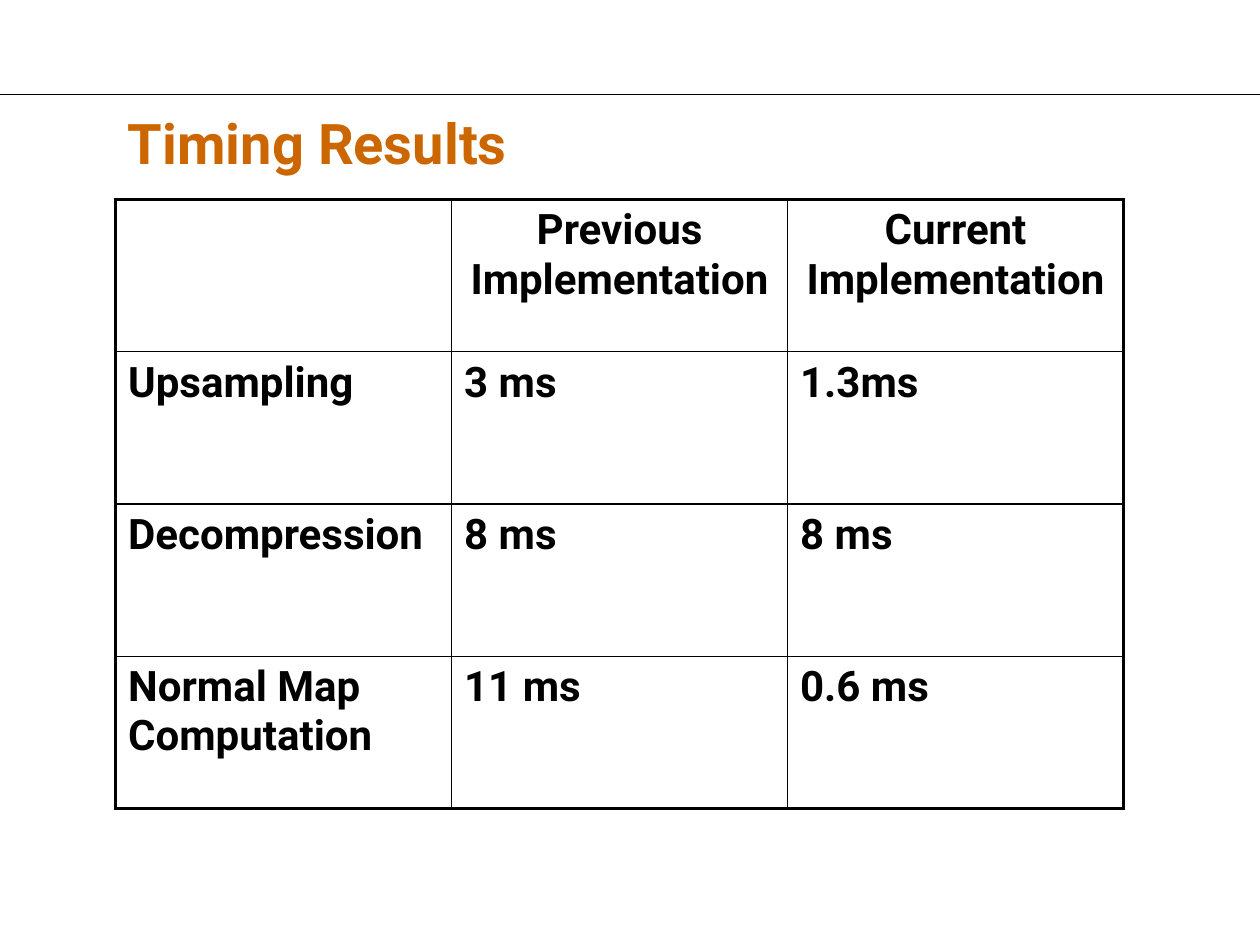
import pptx
import pptx.dml.color
import pptx.enum.shapes
import pptx.enum.text
import pptx.oxml
import pptx.oxml.ns
import pptx.util
from dataclasses import dataclass

Cm = pptx.util.Cm
Pt = pptx.util.Pt
RGB = pptx.dml.color.RGBColor.from_string
ALIGN = pptx.enum.text.PP_ALIGN

# Content
HEADING = "Timing Results"
TIMINGS = [
    ("", "Previous Implementation", "Current Implementation"),
    ("Upsampling", "3 ms", "1.3ms"),
    ("Decompression", "8 ms", "8 ms"),
    ("Normal Map Computation", "11 ms", "0.6 ms"),
]


@dataclass(frozen=True)
class Theme:
    font: str = "Roboto"
    ink: str = "000000"
    accent: str = "CC6600"
    heading_size: float = 32
    cell_size: float = 24
    rule: float = 0.75
    inner_border: float = 1
    outer_border: float = 2.25


THEME = Theme()

# Layout
SLIDE_W, SLIDE_H = Cm(25.4), Cm(19.05)
LEFT, CONTENT_W = Cm(2.33), Cm(20.32)
RULE_Y, HEADING_H = Cm(1.91), Cm(1.9)
TABLE_TOP, ROW_H = Cm(4.02), Cm(3.07)


def write(paragraph, text, size, color):
    run = paragraph.add_run()
    run.text = text
    run.font.name = THEME.font
    run.font.size = Pt(size)
    run.font.bold = True
    run.font.color.rgb = RGB(color)


def add_border(cell, side, points):
    cell._tc.get_or_add_tcPr().append(pptx.oxml.parse_xml(
        f'<a:ln{side} {pptx.oxml.ns.nsdecls("a")} w="{Pt(points)}">'
        f'<a:solidFill><a:srgbClr val="{THEME.ink}"/></a:solidFill>'
        f'<a:prstDash val="solid"/></a:ln{side}>'))


def add_rule(slide):
    rule = slide.shapes.add_connector(
        pptx.enum.shapes.MSO_CONNECTOR.STRAIGHT, 0, RULE_Y, SLIDE_W, RULE_Y)
    rule.line.color.rgb = RGB(THEME.ink)
    rule.line.width = Pt(THEME.rule)
    rule._element.spPr.append(pptx.oxml.parse_xml(
        f'<a:effectLst {pptx.oxml.ns.nsdecls("a")}/>'))


def add_heading(slide):
    heading = slide.shapes.add_textbox(LEFT, RULE_Y, CONTENT_W, HEADING_H).text_frame
    heading.word_wrap = True
    heading.vertical_anchor = pptx.enum.text.MSO_ANCHOR.MIDDLE
    write(heading.paragraphs[0], HEADING, THEME.heading_size, THEME.accent)


def add_timings(slide):
    row_count, col_count = len(TIMINGS), len(TIMINGS[0])
    timings = slide.shapes.add_table(
        row_count, col_count, LEFT, TABLE_TOP, CONTENT_W, ROW_H * row_count).table
    timings.first_row = timings.horz_banding = False
    for r, row in enumerate(TIMINGS):
        for c, text in enumerate(row):
            cell = timings.cell(r, c)
            # Heavy border on the outside edges, thin between cells
            on_edge = {"L": c == 0, "R": c == col_count - 1,
                       "T": r == 0, "B": r == row_count - 1}
            for side, outer in on_edge.items():
                add_border(cell, side,
                           THEME.outer_border if outer else THEME.inner_border)
            cell.fill.background()
            paragraph = cell.text_frame.paragraphs[0]
            paragraph.alignment = ALIGN.CENTER if r == 0 else ALIGN.LEFT
            if text:
                write(paragraph, text, THEME.cell_size, THEME.ink)


def main():
    deck = pptx.Presentation()
    deck.slide_width, deck.slide_height = SLIDE_W, SLIDE_H
    slide = deck.slides.add_slide(deck.slide_layouts[6])
    add_rule(slide)
    add_heading(slide)
    add_timings(slide)
    deck.save("out.pptx")


if __name__ == "__main__":
    main()
